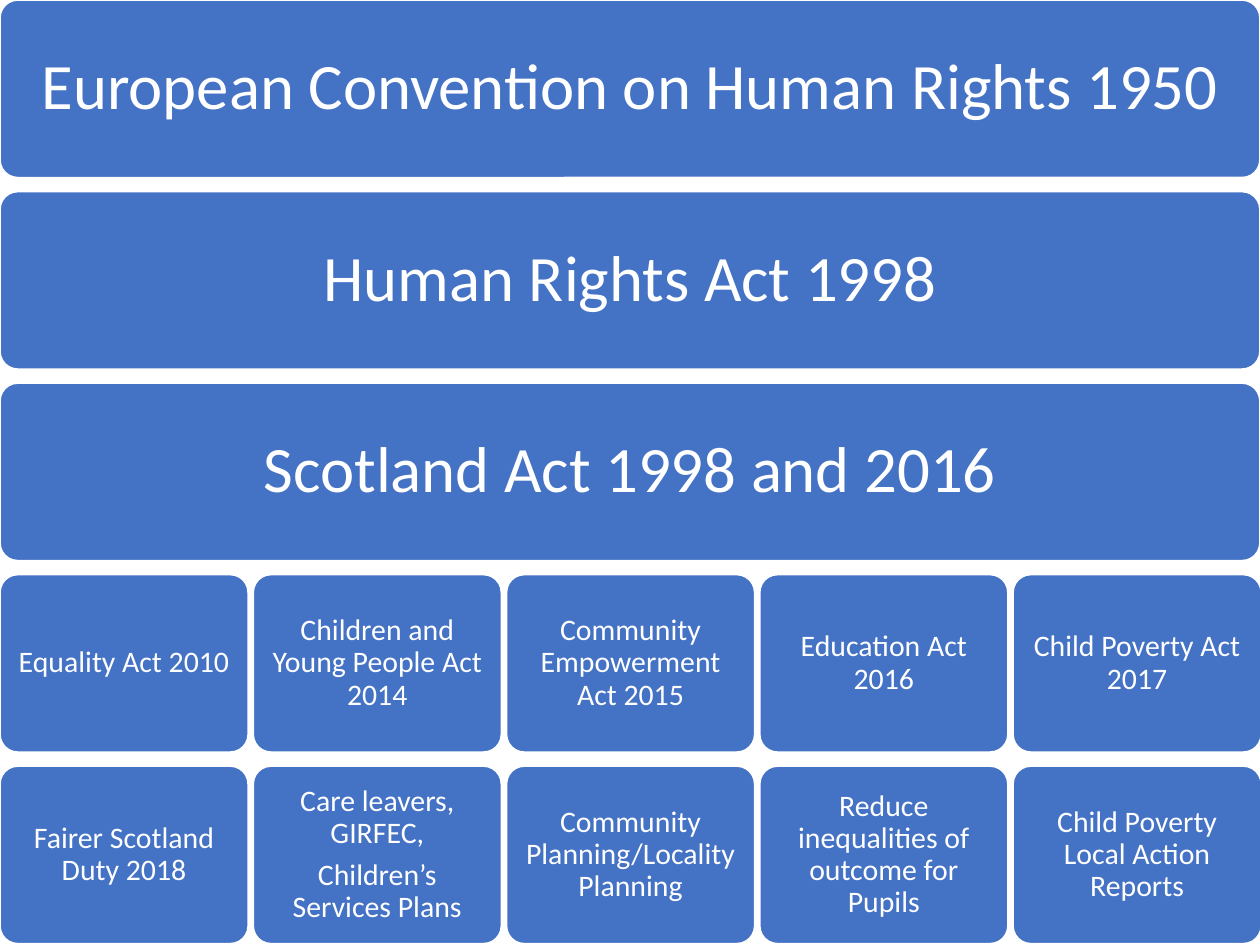
from dataclasses import dataclass

from pptx import Presentation
from pptx.dml.color import RGBColor
from pptx.enum.shapes import MSO_SHAPE
from pptx.enum.text import MSO_ANCHOR, PP_ALIGN
from pptx.util import Inches, Pt

ROUND = MSO_SHAPE.ROUNDED_RECTANGLE
MIDDLE = MSO_ANCHOR.MIDDLE
CENTER = PP_ALIGN.CENTER
BLUE, WHITE = "4472C4", "FFFFFF"
FONT = "Calibri"

# Grid in inches
WIDTH, HEIGHT = 10, 7.5
BOX_H, ROW_STEP = 1.41, 1.52
COL_W, COL_STEP = 1.97, 2.01


@dataclass
class Style:
    width: float
    size: int
    inset: float
    gap: int  # points between paragraphs


@dataclass
class Box:
    row: int
    col: int
    lines: list[str]
    style: Style


BAND = Style(WIDTH, 37, 0.15, 0)
CELL = Style(COL_W, 17, 0.07, 6)

LAWS = [
    "European Convention on Human Rights 1950",
    "Human Rights Act 1998",
    "Scotland Act 1998 and 2016",
]

# Each act with the duties below it
ACTS = [
    ("Equality Act 2010", ["Fairer Scotland Duty 2018"]),
    ("Children and Young People Act 2014",
     ["Care leavers, GIRFEC,", "Children’s Services Plans"]),
    ("Community Empowerment Act 2015", ["Community Planning/Locality Planning"]),
    ("Education Act 2016", ["Reduce inequalities of outcome for Pupils"]),
    ("Child Poverty Act 2017", ["Child Poverty Local Action Reports"]),
]


def color(code: str) -> RGBColor:
    return RGBColor.from_string(code)


def draw_box(slide, box: Box) -> None:
    style = box.style
    shape = slide.shapes.add_shape(
        ROUND, Inches(box.col * COL_STEP), Inches(box.row * ROW_STEP),
        Inches(style.width), Inches(BOX_H))
    shape.adjustments[0] = 0.1
    shape.shadow.inherit = False
    shape.fill.solid()
    shape.fill.fore_color.rgb = color(BLUE)
    shape.line.color.rgb = color(WHITE)
    shape.line.width = Pt(1)

    frame = shape.text_frame
    inset = Inches(style.inset)
    layout = {
        "word_wrap": True, "vertical_anchor": MIDDLE,
        "margin_left": inset, "margin_right": inset,
        "margin_top": inset, "margin_bottom": inset,
    }
    for name, value in layout.items():
        setattr(frame, name, value)

    for i, line in enumerate(box.lines):
        para = frame.add_paragraph() if i else frame.paragraphs[0]
        para.alignment = CENTER
        para.line_spacing = 0.9
        para.space_before = Pt(style.gap if i else 0)
        run = para.add_run()
        run.text = line
        run.font.name = FONT
        run.font.size = Pt(style.size)
        run.font.color.rgb = color(WHITE)


def main() -> None:
    deck = Presentation()
    deck.slide_width, deck.slide_height = Inches(WIDTH), Inches(HEIGHT)
    slide = deck.slides.add_slide(deck.slide_layouts[6])

    # Full-width laws
    for row, law in enumerate(LAWS):
        draw_box(slide, Box(row, 0, [law], BAND))

    # Columns of acts and duties
    top = len(LAWS)
    for col, (act, duties) in enumerate(ACTS):
        draw_box(slide, Box(top, col, [act], CELL))
        draw_box(slide, Box(top + 1, col, duties, CELL))

    deck.save("out.pptx")


if __name__ == "__main__":
    main()
